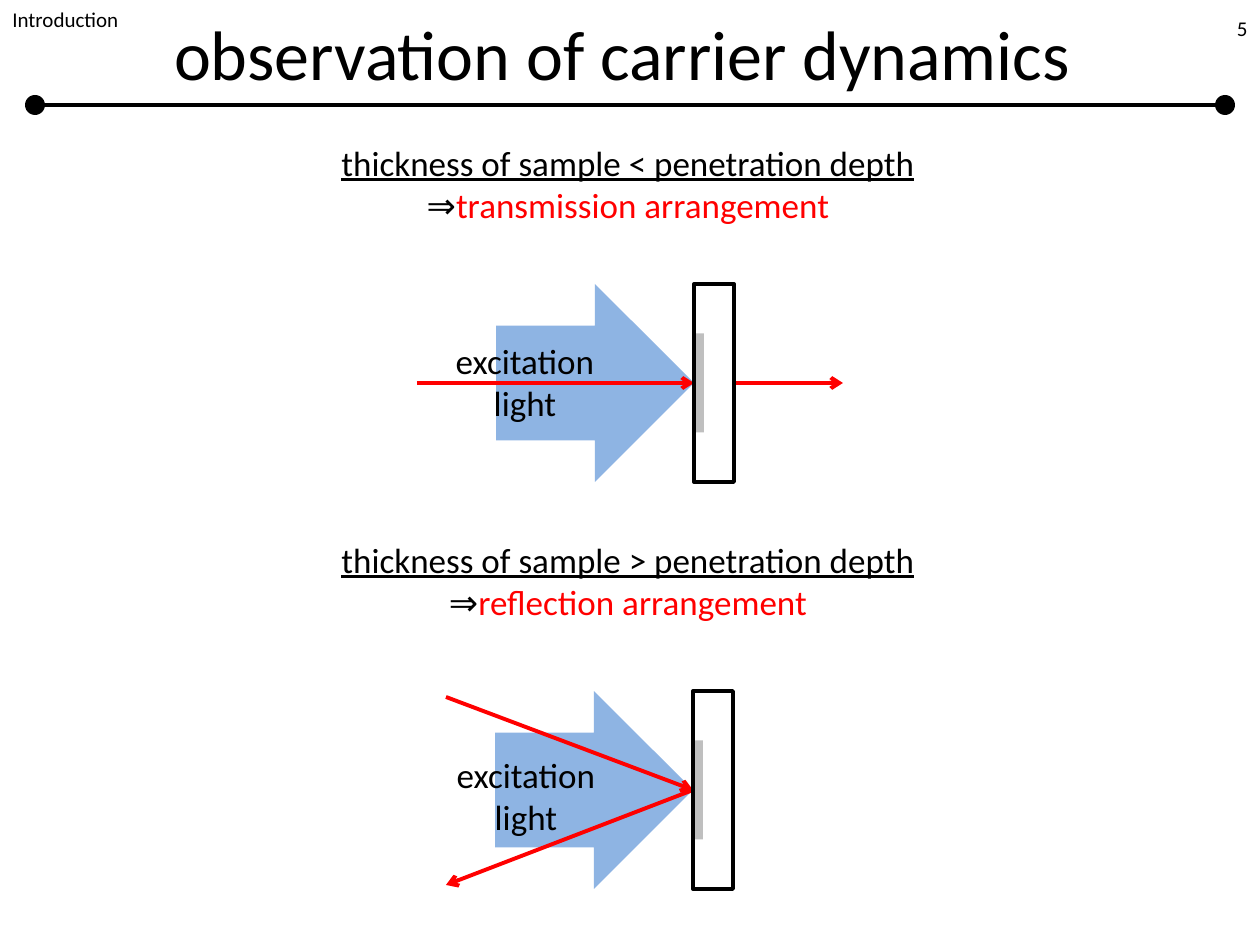
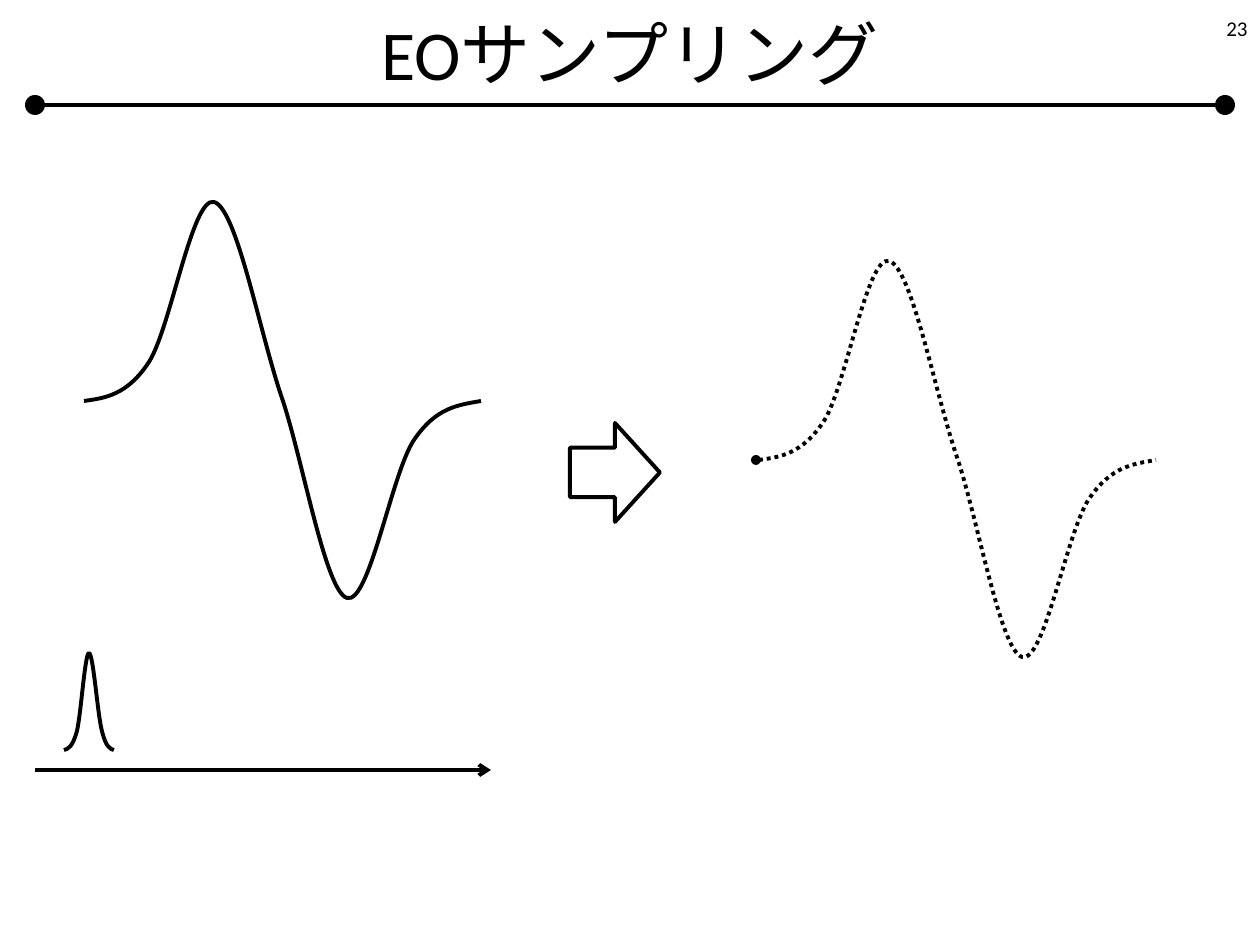
from lxml import etree
from pptx import Presentation
from pptx.dml.color import RGBColor
from pptx.enum.dml import MSO_LINE
from pptx.enum.shapes import MSO_CONNECTOR, MSO_SHAPE
from pptx.enum.text import MSO_ANCHOR, PP_ALIGN
from pptx.oxml.ns import qn
from pptx.util import Pt

EMU_PER_PX = 914400 / 126
SLIDE_W, SLIDE_H = 1260, 945
FONT = "Calibri"
LINE_PT = 2.25
COLORS = {"ink": "000000", "accent": "FF0000", "light": "8EB4E3", "excited": "BFBFBF"}

ELLIPSE, RECT, ARROW = MSO_SHAPE.OVAL, MSO_SHAPE.RECTANGLE, MSO_SHAPE.RIGHT_ARROW
STRAIGHT = MSO_CONNECTOR.STRAIGHT
DOTTED = MSO_LINE.ROUND_DOT
LEFT, CENTER, RIGHT = PP_ALIGN.LEFT, PP_ALIGN.CENTER, PP_ALIGN.RIGHT
TOP, MIDDLE = MSO_ANCHOR.TOP, MSO_ANCHOR.MIDDLE

# Header: rule from dot centre to dot centre
RULE_Y, RULE_ENDS, RULE_DOT = 105, (35, 1225), 20

# Slide 1: each arrangement has a heading, a pump arrow, a sample and probe rays
ARRANGEMENTS = [
    {
        "condition": "thickness of sample < penetration depth",
        "result": "transmission arrangement",
        "heading_y": 135,
        "pump": (496, 284),
        "label": (436, 333),
        "rays": [(417, 383, 694, 383), (735, 383, 843, 383)],
    },
    {
        "condition": "thickness of sample > penetration depth",
        "result": "reflection arrangement",
        "heading_y": 532,
        "pump": (495, 691),
        "label": (437, 747),
        "rays": [(446, 697, 693, 790), (693, 790, 446, 885)],
    },
]
PUMP_LABEL = "excitation light"
PUMP_SIZE = 198
SAMPLE_W, EXCITED_W = 40, 10

# Slide 2: x of the knots, and heights of all Bezier points, from the curve's start
WAVE = {
    "knots": [0, 65, 130, 199, 263, 330, 397],
    "heights": [0, -3, -6, -39, -73, -205, -199, -193, -66, 0,
                66, 190, 197, 204, 72, 39, 6, 4, 0],
}
PULSE = {
    "knots": [0, 13, 25, 38, 50],
    "heights": [0, -1, -3, -19, -35, -97, -97, -97, -35, -19, -3, -1, 0],
}
WAVE_START, PULSE_START, SAMPLED_START = (84, 401), (64, 750), (759, 460)
FIRST_SAMPLE = (751, 455, 10, 10)
RESULT_ARROW = (570, 423, 90, 99)
TIME_AXIS = (35, 770, 491, 770)


def px(length):
    return round(length * EMU_PER_PX)


def rgb(name):
    return RGBColor.from_string(COLORS[name])


def set_line(line, color, dash=None):
    line.color.rgb = rgb(color)
    line.width = Pt(LINE_PT)
    if dash:
        line.dash_style = dash


def style_shape(shape, fill=None, line=None, dash=None):
    shape.shadow.inherit = False
    if fill:
        shape.fill.solid()
        shape.fill.fore_color.rgb = rgb(fill)
    else:
        shape.fill.background()
    if line:
        set_line(shape.line, line, dash)
    else:
        shape.line.fill.background()


def add_figure(slide, kind, box, **style):
    shape = slide.shapes.add_shape(kind, *map(px, box))
    style_shape(shape, **style)
    return shape


def add_line(slide, ends, color, arrow=False):
    connector = slide.shapes.add_connector(STRAIGHT, *map(px, ends))
    set_line(connector.line, color)
    if arrow:
        etree.SubElement(connector.line._get_or_add_ln(), qn("a:tailEnd"), type="arrow")
    etree.SubElement(connector._element.spPr, qn("a:effectLst"))


def add_text(slide, box, paragraphs, size, align=CENTER, anchor=TOP, wrap=True):
    """Each paragraph is a list of (text, font values) runs."""
    frame = slide.shapes.add_textbox(*map(px, box)).text_frame
    for name, value in {"word_wrap": wrap, "vertical_anchor": anchor}.items():
        setattr(frame, name, value)
    for i, runs in enumerate(paragraphs):
        paragraph = frame.paragraphs[0] if i == 0 else frame.add_paragraph()
        paragraph.alignment = align
        for text, extra in runs:
            run = paragraph.add_run()
            run.text = text
            values = {"name": FONT, "size": Pt(size), "color": "ink", **extra}
            run.font.color.rgb = rgb(values.pop("color"))
            for name, value in values.items():
                setattr(run.font, name, value)


def join_as_beziers(shape):
    """Turn every three line segments of a freeform into one cubic curve."""
    outline = next(shape._element.iter(qn("a:path")))
    segments = outline.findall(qn("a:lnTo"))
    for i in range(0, len(segments), 3):
        curve = etree.SubElement(outline, qn("a:cubicBezTo"))
        for segment in segments[i:i + 3]:
            curve.append(segment[0])
            outline.remove(segment)


def add_curve(slide, curve, start, dash=None):
    knots = curve["knots"]
    xs = [a + (b - a) * third / 3 for a, b in zip(knots, knots[1:]) for third in range(3)]
    xs.append(knots[-1])
    points = [(px(start[0] + x), px(start[1] + y)) for x, y in zip(xs, curve["heights"])]
    builder = slide.shapes.build_freeform(*points[0])
    builder.add_line_segments(points[1:], close=False)
    shape = builder.convert_to_shape()
    join_as_beziers(shape)
    style_shape(shape, line="ink", dash=dash)


def add_page(deck, title, number):
    slide = deck.slides.add_slide(deck.slide_layouts[6])
    for x in RULE_ENDS:
        dot = (x - RULE_DOT / 2, RULE_Y - RULE_DOT / 2, RULE_DOT, RULE_DOT)
        add_figure(slide, ELLIPSE, dot, fill="ink")
    add_line(slide, (RULE_ENDS[0], RULE_Y, RULE_ENDS[1], RULE_Y), "ink")
    add_text(slide, (0, 0, SLIDE_W, 105), [[(title, {})]], 40, anchor=MIDDLE)
    add_text(slide, (958, 0, 302, 56), [[(number, {})]], 12, RIGHT, MIDDLE)
    return slide


def add_arrangement(slide, part):
    heading = [
        [(part["condition"], {"underline": True})],
        [("⇒", {}), (part["result"], {"color": "accent"})],
    ]
    add_text(slide, (313, part["heading_y"], 630, 97), heading, 20)

    left, top = part["pump"]
    pump = add_figure(slide, ARROW, (left, top, PUMP_SIZE, PUMP_SIZE), fill="light")
    pump.adjustments[0] = 0.58
    pump.adjustments[1] = 0.5
    add_text(slide, (*part["label"], 178, 97), [[(PUMP_LABEL, {})]], 20)

    face = left + PUMP_SIZE
    excited = (face, top + PUMP_SIZE / 4, EXCITED_W, PUMP_SIZE / 2)
    incoming, outgoing = part["rays"]
    add_line(slide, incoming, "accent", arrow=True)
    add_figure(slide, RECT, excited, fill="excited")
    add_line(slide, outgoing, "accent", arrow=True)
    add_figure(slide, RECT, (face, top, SAMPLE_W, PUMP_SIZE), line="ink")


def build_carrier_dynamics(deck):
    slide = add_page(deck, "observation of carrier dynamics ", "5")
    add_text(slide, (0, 0, 134, 37), [[("Introduction", {})]], 12, LEFT, wrap=False)
    for part in ARRANGEMENTS:
        add_arrangement(slide, part)


def build_eo_sampling(deck):
    slide = add_page(deck, "EOサンプリング", "23")
    add_curve(slide, WAVE, WAVE_START)
    add_figure(slide, ELLIPSE, FIRST_SAMPLE, fill="ink")
    add_curve(slide, PULSE, PULSE_START)
    add_figure(slide, ARROW, RESULT_ARROW, line="ink")
    add_curve(slide, WAVE, SAMPLED_START, DOTTED)
    add_line(slide, TIME_AXIS, "ink", arrow=True)


def main():
    deck = Presentation()
    deck.slide_width, deck.slide_height = px(SLIDE_W), px(SLIDE_H)
    build_carrier_dynamics(deck)
    build_eo_sampling(deck)
    deck.save("out.pptx")


if __name__ == "__main__":
    main()
